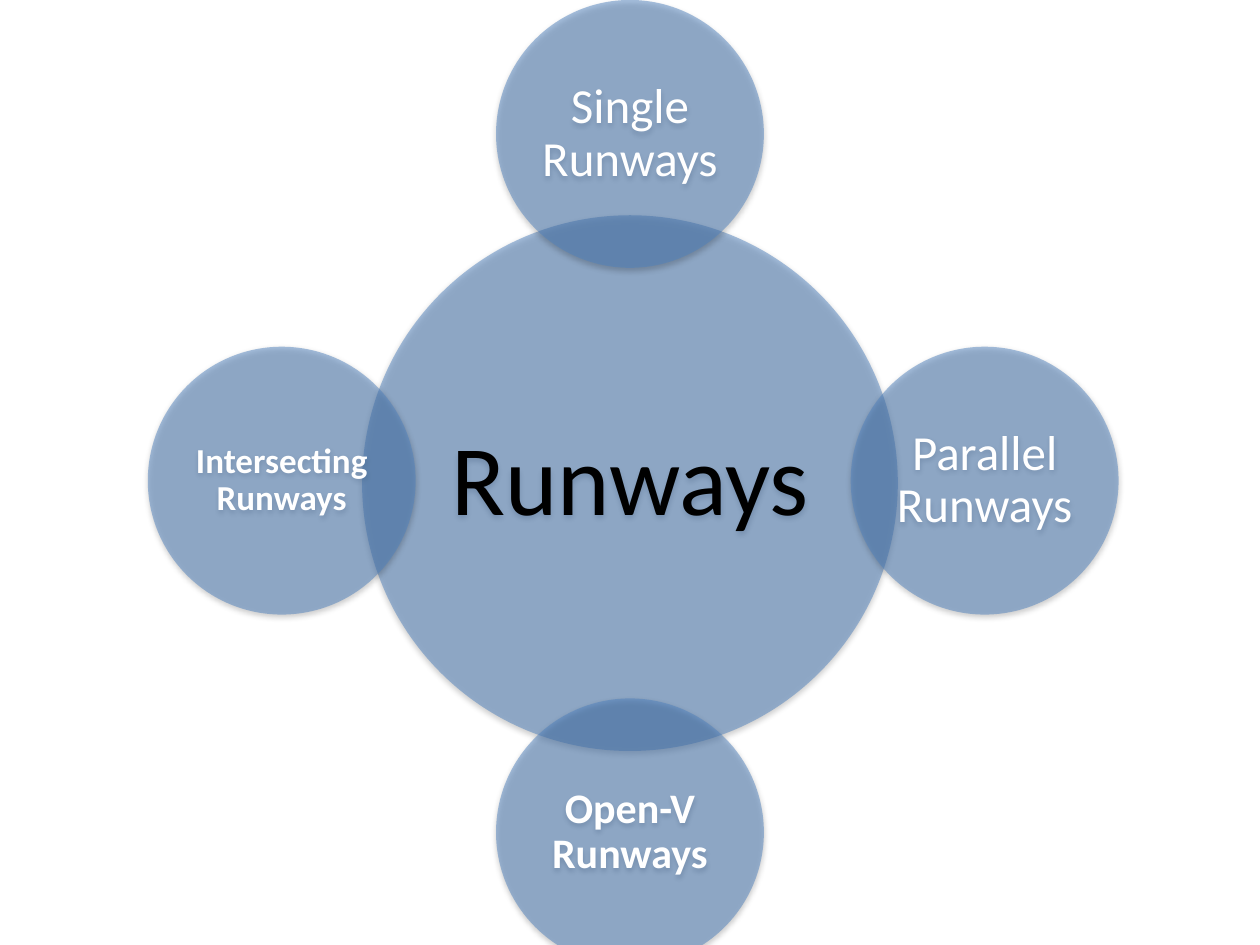
from lxml import etree
from pptx import Presentation
from pptx.dml.color import RGBColor
from pptx.enum.shapes import MSO_SHAPE
from pptx.enum.text import MSO_ANCHOR, PP_ALIGN
from pptx.oxml import parse_xml
from pptx.oxml.ns import qn
from pptx.util import Cm, Pt

OVAL = MSO_SHAPE.OVAL
MIDDLE = MSO_ANCHOR.MIDDLE
CENTER = PP_ALIGN.CENTER

BLUE = RGBColor(0x4F, 0x81, 0xBD)
BLACK = RGBColor(0x00, 0x00, 0x00)
WHITE = RGBColor(0xFF, 0xFF, 0xFF)

SHADOW = (
    '<a:effectLst xmlns:a="http://schemas.openxmlformats.org/drawingml/2006/main">'
    '<a:outerShdw blurRad="40000" dist="20000" dir="5400000" rotWithShape="0">'
    '<a:srgbClr val="000000"><a:alpha val="38000"/></a:srgbClr>'
    '</a:outerShdw></a:effectLst>'
)

HUB_SIZE = 10.8
SATELLITE_SIZE = HUB_SIZE / 2

# Text, centre x, centre y, diameter, inset (cm), font size, bold, text colour
CIRCLES = [
    ("Runways", 12.7, 9.74, HUB_SIZE, 0.2, 57, False, BLACK),
    ("Single Runways", 12.7, 2.7, SATELLITE_SIZE, 0.1, 28, False, WHITE),
    ("Parallel Runways", 19.85, 9.69, SATELLITE_SIZE, 0.1, 28, False, WHITE),
    ("Open-V Runways", 12.7, 16.78, SATELLITE_SIZE, 0.08, 24, True, WHITE),
    ("Intersecting Runways", 5.68, 9.69, SATELLITE_SIZE, 0.08, 20, True, WHITE),
]

presentation = Presentation()
presentation.slide_width = Cm(25.4)
presentation.slide_height = Cm(19.05)
slide = presentation.slides.add_slide(presentation.slide_layouts[6])

for text, center_x, center_y, size, inset, font_size, bold, color in CIRCLES:
    circle = slide.shapes.add_shape(
        OVAL, Cm(center_x - size / 2), Cm(center_y - size / 2), Cm(size), Cm(size)
    )
    circle.fill.solid()
    circle.fill.fore_color.rgb = BLUE
    fill_color = circle.fill._xPr.find(qn("a:solidFill"))[0]
    etree.SubElement(fill_color, qn("a:alpha"), val="50000")
    circle.line.fill.background()
    circle.element.spPr.append(parse_xml(SHADOW))

    frame = circle.text_frame
    frame.word_wrap = True
    frame.vertical_anchor = MIDDLE
    frame.margin_left = frame.margin_right = Cm(inset)
    frame.margin_top = frame.margin_bottom = Cm(inset)

    paragraph = frame.paragraphs[0]
    paragraph.text = text
    paragraph.alignment = CENTER
    paragraph.line_spacing = 0.9
    paragraph.font.name = "Calibri"
    paragraph.font.size = Pt(font_size)
    paragraph.font.bold = bold
    paragraph.font.color.rgb = color

presentation.save("out.pptx")
